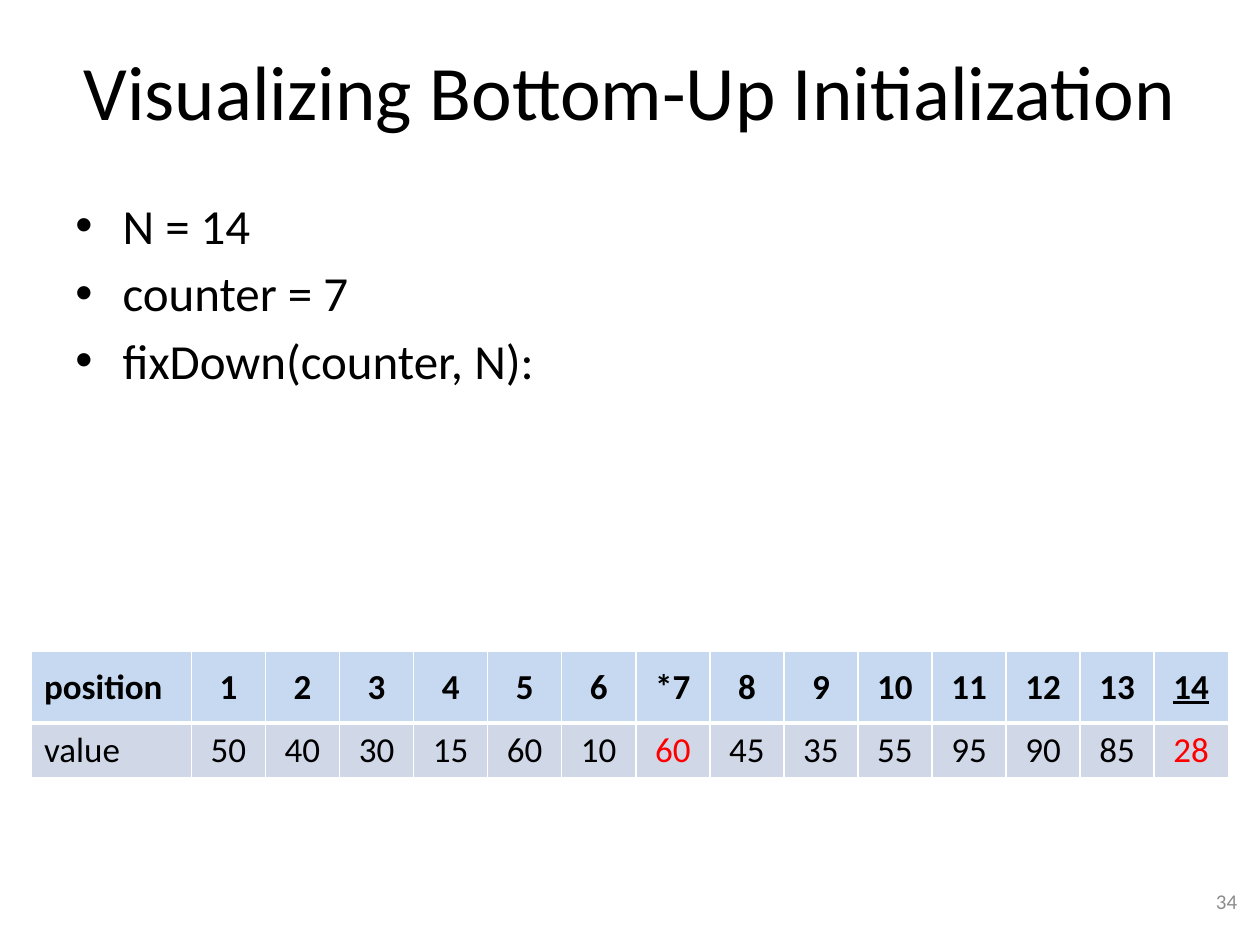
import pptx
import pptx.dml.color
import pptx.enum.text
import pptx.oxml
import pptx.util
from lxml import etree

Pt = pptx.util.Pt
ALIGN = pptx.enum.text.PP_ALIGN
ANCHOR = pptx.enum.text.MSO_ANCHOR

FONT = "Calibri"
COLORS = {
    "text": "000000",
    "changed": "FF0000",
    "page": "8C8C8C",
    "position": "C6D9F1",
    "value": "D0D8E8",
    "border": "FFFFFF",
}

TITLE = "Visualizing Bottom-Up Initialization"
STEPS = ["N = 14", "counter = 7", "fixDown(counter, N):"]
PAGE = "34"
POSITIONS = ["1", "2", "3", "4", "5", "6", "*7", "8", "9", "10", "11", "12", "13", "14"]
VALUES = [50, 40, 30, 15, 60, 10, 60, 45, 35, 55, 95, 90, 85, 28]
CHANGED = {7, 14}
LAST = 14

HEAP_LEFT, HEAP_TOP, HEAP_WIDTH = 18, 372.2, 684
LABEL_WIDTH = 91.4
ROW_HEIGHTS = [41, 29.2]
BULLET_INDENT = 27


def rgb(name):
    return pptx.dml.color.RGBColor.from_string(COLORS[name])


def style(paragraph, size, color="text", align=ALIGN.LEFT):
    paragraph.alignment = align
    paragraph.font.name = FONT
    paragraph.font.size = Pt(size)
    paragraph.font.color.rgb = rgb(color)


def add_text(slide, box, lines, size, color="text", align=ALIGN.LEFT, anchor=ANCHOR.TOP):
    frame = slide.shapes.add_textbox(*map(Pt, box)).text_frame
    frame.word_wrap = True
    frame.vertical_anchor = anchor
    frame.text = "\n".join(lines)
    for paragraph in frame.paragraphs:
        style(paragraph, size, color, align)
    return frame


def add_bullet(paragraph):
    properties = paragraph._p.get_or_add_pPr()
    properties.set("marL", str(Pt(BULLET_INDENT)))
    properties.set("indent", str(-Pt(BULLET_INDENT)))
    for tag, key, text in (("a:buFont", "typeface", "Arial"), ("a:buChar", "char", "•")):
        bullet = pptx.oxml.ns.qn(tag)
        properties.insert_element_before(
            properties.makeelement(bullet, {key: text}), "a:tabLst", "a:defRPr", "a:extLst")


def set_borders(cell, widths):
    """Draw the cell's edges; widths maps L, R, T and B to points."""
    qn = pptx.oxml.ns.qn
    properties = cell._tc.get_or_add_tcPr()
    for index, (side, width) in enumerate(widths.items()):
        line = properties.makeelement(qn("a:ln" + side), {"w": str(Pt(width))})
        fill = etree.SubElement(line, qn("a:solidFill"))
        etree.SubElement(fill, qn("a:srgbClr"), val=COLORS["border"])
        properties.insert(index, line)


def add_heap(slide):
    rows = [["position", *POSITIONS], ["value", *VALUES]]
    columns = len(rows[0])
    heap = slide.shapes.add_table(
        len(rows), columns, Pt(HEAP_LEFT), Pt(HEAP_TOP), Pt(HEAP_WIDTH), Pt(sum(ROW_HEIGHTS))
    ).table
    item_width = (HEAP_WIDTH - LABEL_WIDTH) / (columns - 1)
    for c, column in enumerate(heap.columns):
        column.width = Pt(item_width if c else LABEL_WIDTH)

    for r, (row, height) in enumerate(zip(rows, ROW_HEIGHTS)):
        heap.rows[r].height = Pt(height)
        header = r == 0
        for c, content in enumerate(row):
            cell = heap.cell(r, c)
            cell.text = str(content)
            cell.vertical_anchor = ANCHOR.MIDDLE
            cell.fill.solid()
            cell.fill.fore_color.rgb = rgb(row[0])
            paragraph = cell.text_frame.paragraphs[0]
            color = "changed" if c in CHANGED and not header else "text"
            style(paragraph, 20, color, ALIGN.CENTER if c else ALIGN.LEFT)
            paragraph.font.bold = header
            paragraph.font.underline = header and c == LAST
            set_borders(cell, {"L": 1, "R": 1, "T": 1 if header else 3, "B": 3 if header else 1})


def main():
    deck = pptx.Presentation()
    deck.slide_width, deck.slide_height = Pt(720), Pt(540)
    slide = deck.slides.add_slide(deck.slide_layouts[6])

    add_text(slide, (36, 6, 648, 90), [TITLE], 44, align=ALIGN.CENTER, anchor=ANCHOR.MIDDLE)
    steps = add_text(slide, (36, 108, 648, 186), STEPS, 28)
    for paragraph in steps.paragraphs:
        paragraph.space_before = Pt(5)
        add_bullet(paragraph)
    add_text(slide, (546, 500.4, 168, 28.8), [PAGE], 12, "page", ALIGN.RIGHT, ANCHOR.MIDDLE)
    add_heap(slide)

    deck.save("out.pptx")


if __name__ == "__main__":
    main()
